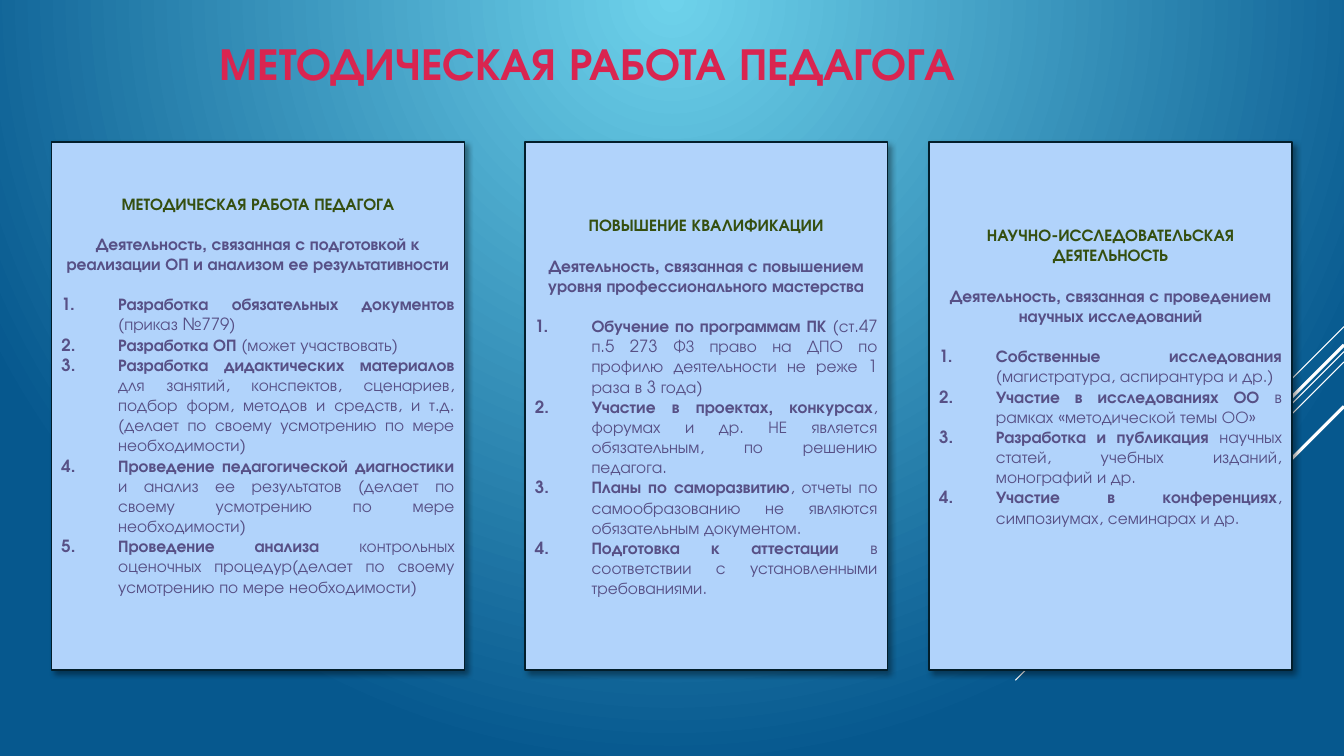
from lxml import etree
from pptx import Presentation
from pptx.dml.color import RGBColor
from pptx.enum import shapes, text
from pptx.oxml import parse_xml
from pptx.oxml.ns import qn
from pptx.util import Cm, Pt

TITLE = "МЕТОДИЧЕСКАЯ РАБОТА ПЕДАГОГА"

# left, width, top inset (cm), heading, summary, [(bold part, plain part)]
CARDS = [
    (1.3, 10.41, 1.29, "МЕТОДИЧЕСКАЯ РАБОТА ПЕДАГОГА",
     "Деятельность, связанная с подготовкой к реализации ОП и анализом ее результативности",
     [("Разработка обязательных документов ", "(приказ №779)"),
      ("Разработка ОП ", "(может участвовать)"),
      ("Разработка дидактических материалов ",
       "для занятий, конспектов, сценариев, подбор форм, методов и средств, и т.д. "
       "(делает по своему усмотрению по мере необходимости)"),
      ("Проведение педагогической диагностики ",
       "и анализ ее результатов (делает по своему усмотрению по мере необходимости)"),
      ("Проведение анализа ",
       "контрольных оценочных процедур(делает по своему усмотрению по мере необходимости)")]),
    (13.23, 9.14, 1.84, "ПОВЫШЕНИЕ КВАЛИФИКАЦИИ",
     "Деятельность, связанная с повышением уровня профессионального мастерства",
     [("Обучение по программам ПК ",
       "(ст.47 п.5 273 ФЗ право на ДПО по профилю деятельности не реже 1 раза в 3 года)"),
      ("Участие в проектах, конкурсах",
       ", форумах и др. НЕ является обязательным, по решению педагога."),
      ("Планы по саморазвитию",
       ", отчеты по самообразованию не являются обязательным документом."),
      ("Подготовка к аттестации ", "в соответствии с установленными требованиями.")]),
    (23.42, 9.14, 2.09, "НАУЧНО-ИССЛЕДОВАТЕЛЬСКАЯ ДЕЯТЕЛЬНОСТЬ",
     "Деятельность, связанная с проведением научных исследований",
     [("Собственные исследования ", "(магистратура, аспирантура и др.)"),
      ("Участие в исследованиях ОО", " в рамках «методической темы ОО»"),
      ("Разработка и публикация ", "научных статей, учебных изданий, монографий и др."),
      ("Участие в конференциях", ", симпозиумах, семинарах и др.")]),
]

# start height on the right edge, run to the left (cm), line width (pt)
RAYS = [(8.23, 2.54, 0.75), (8.86, 8.28, 0.75), (9.12, 5.27, 0.75),
        (8.69, 4.85, 2.25), (10.24, 3.53, 2.25)]

THEME = dict(font="TeX Gyre Adventor", title="D92550", heading="354F10", body="575086",
             card="B1D3FB", border="021E2B", ray="FFFFFF", glow="6ED2EB", deep="06588E",
             title_size=32.4, body_size=12)
SLIDE_W, SLIDE_H = 33.87, 19.05
CARD_TOP, CARD_H = 3.58, 13.31
INDENT = 1.43
BLANK_LINE = 1.2 * THEME["body_size"]
A = 'xmlns:a="http://schemas.openxmlformats.org/drawingml/2006/main"'
ALIGN = text.PP_ALIGN


def rgb(name):
    return RGBColor.from_string(THEME[name])


def add_text(p, words, size="body_size", color="body", bold=False):
    r = p.add_run()
    r.text = words
    f = r.font
    f.name, f.size, f.bold = THEME["font"], Pt(THEME[size]), bold
    f.color.rgb = rgb(color)


def add_paragraph(tf, align, before=0):
    p = tf.paragraphs[0] if not tf.paragraphs[0].runs else tf.add_paragraph()
    p.alignment = align
    p.space_before = Pt(before)
    return p


def number(p):
    """Give the paragraph an automatic number on a hanging indent."""
    pPr = p._p.get_or_add_pPr()
    pPr.set("marL", str(Cm(INDENT)))
    pPr.set("indent", str(-Cm(INDENT)))
    etree.SubElement(pPr, qn("a:buFont")).set("typeface", THEME["font"])
    etree.SubElement(pPr, qn("a:buAutoNum")).set("type", "arabicPeriod")


def set_background(slide):
    fill = slide.background.fill
    fill.gradient()
    for stop, name in zip(fill.gradient_stops, ("glow", "deep")):
        stop.color.rgb = rgb(name)
    for stop, position in zip(fill.gradient_stops, (0, 1)):
        stop.position = position
    grad = slide._element.find(".//" + qn("a:gradFill"))
    grad.replace(grad.find(qn("a:lin")), parse_xml(
        f'<a:path {A} path="circle"><a:fillToRect b="100000"/></a:path>'))


def add_ray(slide, y, run, width):
    c = slide.shapes.add_connector(shapes.MSO_CONNECTOR.STRAIGHT, Cm(SLIDE_W), Cm(y),
                                   Cm(SLIDE_W - run), Cm(y + run))
    c.line.color.rgb = rgb("ray")
    c.line.width = Pt(width)
    etree.SubElement(c._element.spPr, qn("a:effectLst"))


def add_title(slide):
    tf = slide.shapes.add_textbox(Cm(5.28), Cm(0.71), Cm(23.7), Cm(1.68)).text_frame
    tf.word_wrap = True
    tf.vertical_anchor = text.MSO_ANCHOR.BOTTOM
    add_text(add_paragraph(tf, ALIGN.LEFT), TITLE, size="title_size", color="title", bold=True)


def add_card(slide, left, width, inset, heading, summary, items):
    sp = slide.shapes.add_shape(shapes.MSO_SHAPE.RECTANGLE, Cm(left), Cm(CARD_TOP),
                                Cm(width), Cm(CARD_H))
    sp.fill.solid()
    sp.fill.fore_color.rgb = rgb("card")
    sp.line.color.rgb = rgb("border")
    sp.line.width = Pt(1.25)
    sp.shadow.inherit = False
    sp._element.spPr.find(qn("a:effectLst")).append(parse_xml(
        f'<a:outerShdw {A} blurRad="{Pt(4)}" dist="{Pt(3)}" dir="2700000" algn="tl" '
        'rotWithShape="0"><a:srgbClr val="000000"><a:alpha val="40000"/></a:srgbClr>'
        '</a:outerShdw>'))
    tf = sp.text_frame
    tf.word_wrap = True
    tf.vertical_anchor = text.MSO_ANCHOR.TOP
    tf.margin_top = Cm(inset)
    add_text(add_paragraph(tf, ALIGN.CENTER), heading, color="heading", bold=True)
    add_text(add_paragraph(tf, ALIGN.CENTER, BLANK_LINE), summary, bold=True)
    for i, (strong, plain) in enumerate(items):
        p = add_paragraph(tf, ALIGN.JUSTIFY, 0 if i else BLANK_LINE)
        number(p)
        add_text(p, strong, bold=True)
        add_text(p, plain)


def main():
    prs = Presentation()
    prs.slide_width, prs.slide_height = Cm(SLIDE_W), Cm(SLIDE_H)
    slide = prs.slides.add_slide(prs.slide_layouts[6])
    set_background(slide)
    for ray in RAYS:
        add_ray(slide, *ray)
    add_title(slide)
    for card in CARDS:
        add_card(slide, *card)
    prs.save("out.pptx")


if __name__ == "__main__":
    main()
